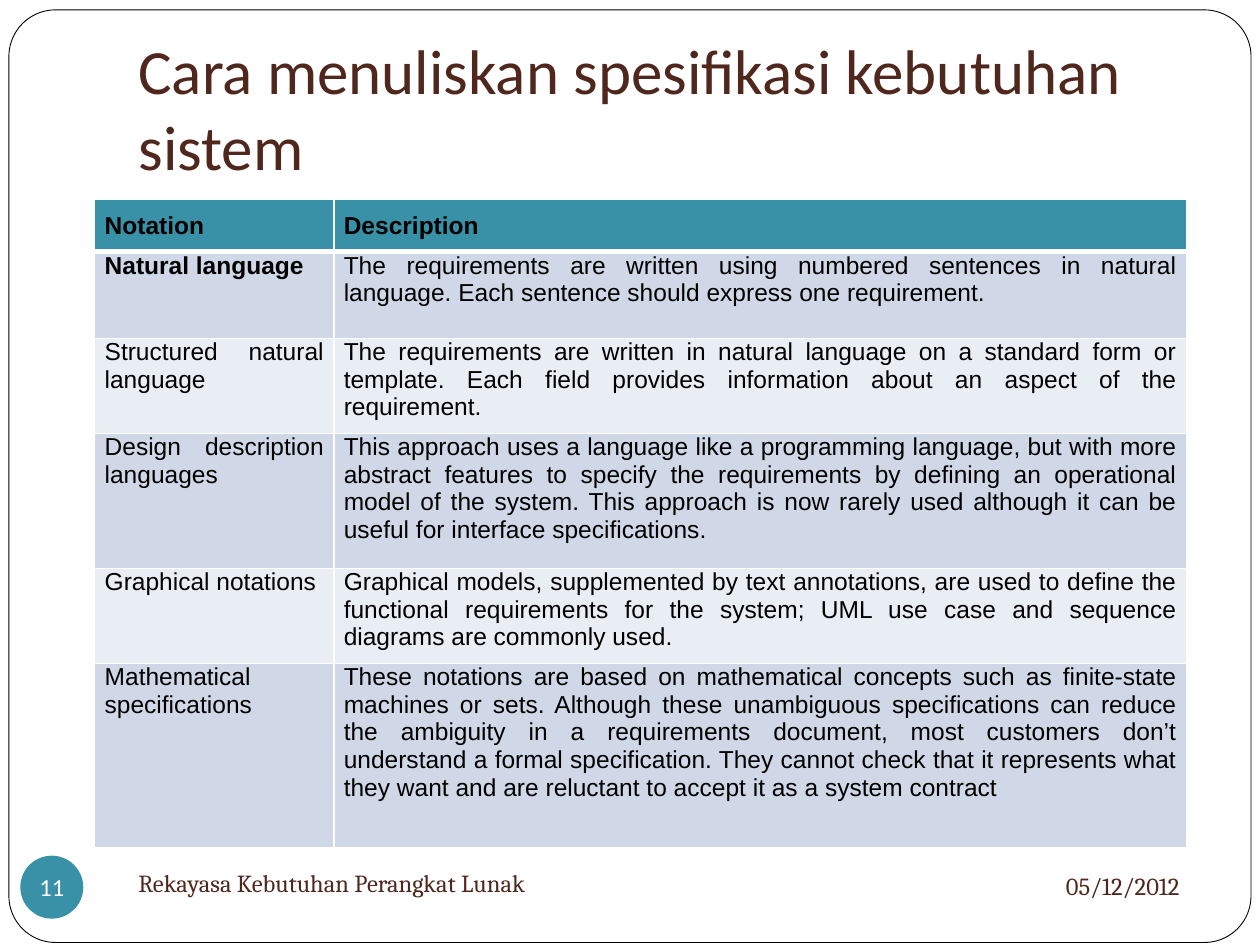
from dataclasses import dataclass

from lxml import etree
from pptx import Presentation
from pptx.dml.color import RGBColor
from pptx.enum.shapes import MSO_SHAPE
from pptx.enum.text import MSO_ANCHOR, MSO_AUTO_SIZE, PP_ALIGN
from pptx.oxml.ns import qn
from pptx.util import Cm, Pt

LEFT, CENTER, RIGHT, JUSTIFY = (
    PP_ALIGN.LEFT, PP_ALIGN.CENTER, PP_ALIGN.RIGHT, PP_ALIGN.JUSTIFY)
MIDDLE, BOTTOM = MSO_ANCHOR.MIDDLE, MSO_ANCHOR.BOTTOM
ROUNDED, OVAL = MSO_SHAPE.ROUNDED_RECTANGLE, MSO_SHAPE.OVAL
NO_AUTOFIT = MSO_AUTO_SIZE.NONE

WHITE = RGBColor(0xFF, 0xFF, 0xFF)
BLACK = RGBColor(0x00, 0x00, 0x00)
BROWN = RGBColor(0x4F, 0x27, 0x1C)
TEAL = RGBColor(0x38, 0x91, 0xA7)
BAND_DARK = RGBColor(0xD0, 0xD8, 0xE8)
BAND_LIGHT = RGBColor(0xE9, 0xED, 0xF4)


@dataclass
class Notation:
    name: str
    description: str
    height: float
    bold_name: bool = False


@dataclass
class FooterText:
    text: str
    left: float
    top: float
    width: float
    height: float
    align: PP_ALIGN


NOTATIONS = [
    Notation("Natural language",
             "The requirements are written using numbered sentences in natural "
             "language. Each sentence should express one requirement.",
             1.75, True),
    Notation("Structured natural language",
             "The requirements are written in natural language on a standard form or "
             "template. Each field provides information about an aspect of the "
             "requirement.", 1.75),
    Notation("Design description languages",
             "This approach uses a language like a programming language, but with more "
             "abstract features to specify the requirements by defining an operational "
             "model of the system. This approach is now rarely used although it can be "
             "useful for interface specifications.", 2.72),
    Notation("Graphical notations",
             "Graphical models, supplemented by text annotations, are used to define the "
             "functional requirements for the system; UML use case and sequence "
             "diagrams are commonly used.", 1.75),
    Notation("Mathematical specifications",
             "These notations are based on mathematical concepts such as finite-state "
             "machines or sets. Although these unambiguous specifications can reduce "
             "the ambiguity in a requirements document, most customers don’t "
             "understand a formal specification. They cannot check that it represents what "
             "they want and are reluctant to accept it as a system contract", 3.71),
]
FOOTERS = [
    FooterText("Rekayasa Kebutuhan Perangkat Lunak", 2.54, 17.15, 11, 1.27, LEFT),
    FooterText("05/12/2012", 17.15, 17.2, 6.88, 1.32, RIGHT),
]
COLUMN_WIDTHS = [4.82, 17.2]
HEADER_HEIGHT = 1.02


def write(frame, text: str, font: str, size: float, color: RGBColor,
          align: PP_ALIGN = LEFT, bold: bool = False) -> None:
    frame.text = text
    para = frame.paragraphs[0]
    para.alignment = align
    para.font.name = font
    para.font.size = Pt(size)
    para.font.bold = bold
    para.font.color.rgb = color


def set_margins(frame, left: float, top: float, right: float, bottom: float) -> None:
    frame.margin_left, frame.margin_top = Cm(left), Cm(top)
    frame.margin_right, frame.margin_bottom = Cm(right), Cm(bottom)


def add_borders(cell, top: float, bottom: float) -> None:
    properties = cell._tc.get_or_add_tcPr()
    for side, width in (("L", 1), ("R", 1), ("T", top), ("B", bottom)):
        line = etree.SubElement(properties, qn(f"a:ln{side}"), w=str(Pt(width)))
        fill = etree.SubElement(line, qn("a:solidFill"))
        etree.SubElement(fill, qn("a:srgbClr"), val=str(WHITE))


def fill_cell(cell, text: str, fill: RGBColor, row: int, align: PP_ALIGN,
              bold: bool) -> None:
    write(cell.text_frame, text, "Arial", 14, BLACK, align, bold)
    set_margins(cell, 0.2, 0.25 if row == 0 else 0, 0.2, 0.25)
    add_borders(cell, top=3 if row == 1 else 1, bottom=3 if row == 0 else 1)
    cell.fill.solid()
    cell.fill.fore_color.rgb = fill


def add_frame(page) -> None:
    frame = page.shapes.add_shape(ROUNDED, Cm(0.18), Cm(0.2), Cm(25.04), Cm(18.8))
    frame.adjustments[0] = 0.05
    frame.shadow.inherit = False
    frame.fill.solid()
    frame.fill.fore_color.rgb = WHITE
    frame.line.color.rgb = BLACK
    frame.line.width = Pt(0.5)
    # Behind the title
    page.shapes.element.insert(2, frame.element)


def add_title(page, text: str) -> None:
    title = page.shapes.title
    title.left, title.top, title.width, title.height = (
        Cm(2.54), Cm(0.76), Cm(21.59), Cm(3.18))
    frame = title.text_frame
    frame.auto_size = NO_AUTOFIT
    frame.vertical_anchor = BOTTOM
    set_margins(frame, 0.25, 0.13, 0.25, 0.25)
    write(frame, text, "Calibri", 36, BROWN)


def add_notation_table(page) -> None:
    heights = [HEADER_HEIGHT] + [notation.height for notation in NOTATIONS]
    table = page.shapes.add_table(
        len(heights), len(COLUMN_WIDTHS), Cm(1.91), Cm(4.02),
        Cm(sum(COLUMN_WIDTHS)), Cm(sum(heights))).table
    for column, width in zip(table.columns, COLUMN_WIDTHS):
        column.width = Cm(width)
    for row, height in zip(table.rows, heights):
        row.height = Cm(height)

    fill_cell(table.cell(0, 0), "Notation", TEAL, 0, LEFT, True)
    fill_cell(table.cell(0, 1), "Description", TEAL, 0, JUSTIFY, True)
    for row, notation in enumerate(NOTATIONS, start=1):
        band = BAND_DARK if row % 2 else BAND_LIGHT
        fill_cell(table.cell(row, 0), notation.name, band, row, JUSTIFY,
                  notation.bold_name)
        fill_cell(table.cell(row, 1), notation.description, band, row, JUSTIFY, False)


def add_page_number(page, number: str) -> None:
    badge = page.shapes.add_shape(OVAL, Cm(0.41), Cm(17.25), Cm(1.27), Cm(1.27))
    badge.shadow.inherit = False
    badge.fill.solid()
    badge.fill.fore_color.rgb = TEAL
    badge.line.fill.background()
    frame = badge.text_frame
    frame.word_wrap = False
    frame.vertical_anchor = MIDDLE
    set_margins(frame, 0, 0, 0, 0)
    write(frame, number, "Calibri", 14, WHITE, CENTER)


def add_footer(page, footer: FooterText) -> None:
    box = page.shapes.add_textbox(
        Cm(footer.left), Cm(footer.top), Cm(footer.width), Cm(footer.height))
    frame = box.text_frame
    frame.word_wrap = True
    frame.vertical_anchor = MIDDLE
    write(frame, footer.text, "Cambria", 14, BROWN, footer.align)


def main() -> None:
    deck = Presentation()
    deck.slide_width, deck.slide_height = Cm(25.4), Cm(19.05)
    page = deck.slides.add_slide(deck.slide_layouts[5])
    add_frame(page)
    add_title(page, "Cara menuliskan spesifikasi kebutuhan sistem")
    add_notation_table(page)
    add_page_number(page, "11")
    for footer in FOOTERS:
        add_footer(page, footer)
    deck.save("out.pptx")


if __name__ == "__main__":
    main()
